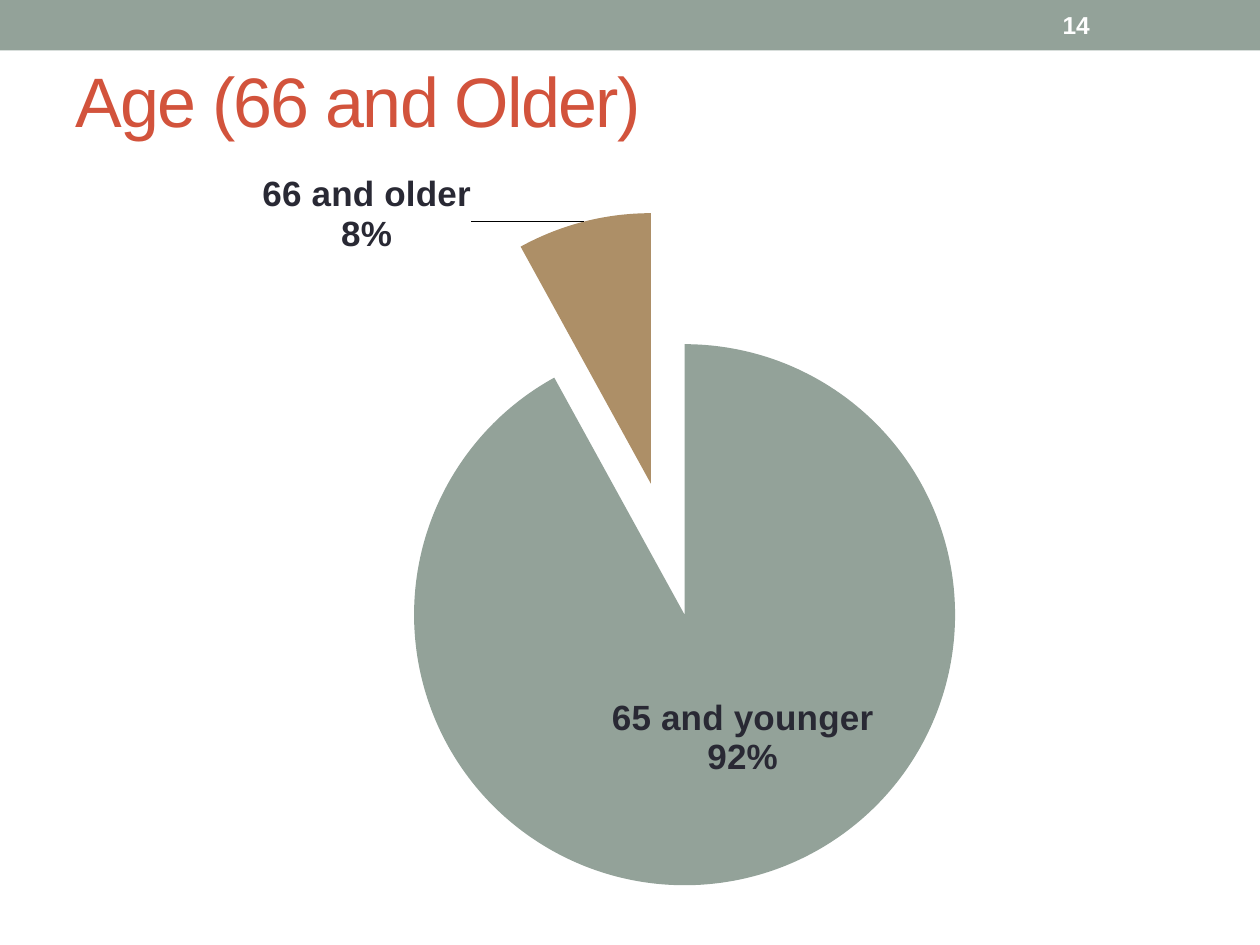
from lxml import etree
from pptx import Presentation
from pptx.chart.data import CategoryChartData
from pptx.dml.color import RGBColor
from pptx.enum.chart import XL_CHART_TYPE, XL_LABEL_POSITION
from pptx.enum.shapes import MSO_SHAPE
from pptx.enum.text import MSO_ANCHOR, PP_ALIGN
from pptx.util import Cm, Pt

PIE = XL_CHART_TYPE.PIE
CENTER, OUTSIDE = XL_LABEL_POSITION.CENTER, XL_LABEL_POSITION.OUTSIDE_END
RECTANGLE = MSO_SHAPE.RECTANGLE
MIDDLE = MSO_ANCHOR.MIDDLE
MID_ALIGN = PP_ALIGN.CENTER
FONT = "Arial"
SAGE, TAN, RUST, INK, WHITE = "93A299", "AD8F67", "D2533C", "292934", "FFFFFF"
CHART_NS = "http://schemas.openxmlformats.org/drawingml/2006/chart"

TITLE = "Age (66 and Older)"
PAGE = "14"
AGE_GROUPS = [
    dict(category="1", value=92, label="65 and younger\n92%", color=SAGE,
         position=CENTER, offset=dict(x=0.02, y=-0.01)),
    dict(category="2", value=8, label="66 and older\n8%", color=TAN,
         position=OUTSIDE, offset=dict(x=-0.09, y=0.05)),
]
PIE_AREA = dict(x=0.26, y=0.12, w=0.55, h=0.86)
EXPLOSION = 25


def rgb(value):
    return RGBColor.from_string(value)


def write(frame, text, size, color, bold=False, spacing=None, align=None):
    frame.text = text
    for paragraph in frame.paragraphs:
        paragraph.alignment = align
        for run in paragraph.runs:
            font = run.font
            font.name, font.size, font.bold = FONT, Pt(size), bold
            font.color.rgb = rgb(color)
            if spacing is not None:
                run._r.get_or_add_rPr().set("spc", str(spacing * 100))


def add_text(slide, text, box, **text_format):
    frame = slide.shapes.add_textbox(*map(Cm, box)).text_frame
    frame.word_wrap = True
    frame.vertical_anchor = MIDDLE
    write(frame, text, **text_format)


def chart_tag(name):
    return f"{{{CHART_NS}}}{name}"


def manual_layout(**settings):
    layout = etree.Element(chart_tag("layout"))
    manual = etree.SubElement(layout, chart_tag("manualLayout"))
    for name, value in settings.items():
        etree.SubElement(manual, chart_tag(name), val=str(value))
    return layout


def add_age_pie(slide, box):
    data = CategoryChartData()
    data.categories = [group["category"] for group in AGE_GROUPS]
    data.add_series("Series 1", [group["value"] for group in AGE_GROUPS])
    chart = slide.shapes.add_chart(PIE, *map(Cm, box), data).chart
    chart.has_title = chart.has_legend = False
    chart.font.name, chart.font.size = FONT, Pt(10)
    chart.font.color.rgb = rgb(INK)

    ages = chart.plots[0].series[0]
    labels = ages.data_labels
    labels.show_percentage, labels.show_value = True, False
    labels.number_format, labels.number_format_is_linked = "0%", False
    labels.font.size, labels.font.bold = Pt(20), True
    for index, group in enumerate(AGE_GROUPS):
        point = ages.points[index]
        point.format.fill.solid()
        point.format.fill.fore_color.rgb = rgb(group["color"])
        label = point.data_label
        write(label.text_frame, group["label"], size=20, color=INK,
              bold=True, align=MID_ALIGN)
        label.position = group["position"]

    root = chart.element
    for group, mark in zip(AGE_GROUPS, root.xpath(".//c:dLbl/c:idx")):
        for old in mark.getparent().findall(chart_tag("layout")):
            mark.getparent().remove(old)
        mark.addnext(manual_layout(**group["offset"]))
    first_point = root.xpath(".//c:dPt")[0]
    first_point.addprevious(
        etree.Element(chart_tag("explosion"), val=str(EXPLOSION)))
    plot_area = root.xpath(".//c:plotArea")[0]
    for old in plot_area.findall(chart_tag("layout")):
        plot_area.remove(old)
    plot_area.insert(0, manual_layout(
        layoutTarget="inner", xMode="edge", yMode="edge", **PIE_AREA))


def main():
    """Build the age slide with its exploded pie."""
    deck = Presentation()
    deck.slide_width, deck.slide_height = Cm(25.4), Cm(19.05)
    slide = deck.slides.add_slide(deck.slide_layouts[6])
    band = slide.shapes.add_shape(RECTANGLE, 0, 0, deck.slide_width, Cm(1.02))
    band.shadow.inherit = False
    band.fill.solid()
    band.fill.fore_color.rgb = rgb(SAGE)
    band.line.fill.background()
    add_text(slide, TITLE, (1.27, 0.41, 22.86, 3.18),
             size=40, color=RUST, spacing=-1)
    add_text(slide, PAGE, (21.17, 0.05, 2.97, 0.91),
             size=14, color=WHITE, bold=True)
    add_age_pie(slide, (0.2, 2.34, 24.79, 15.88))
    deck.save("out.pptx")


if __name__ == "__main__":
    main()
